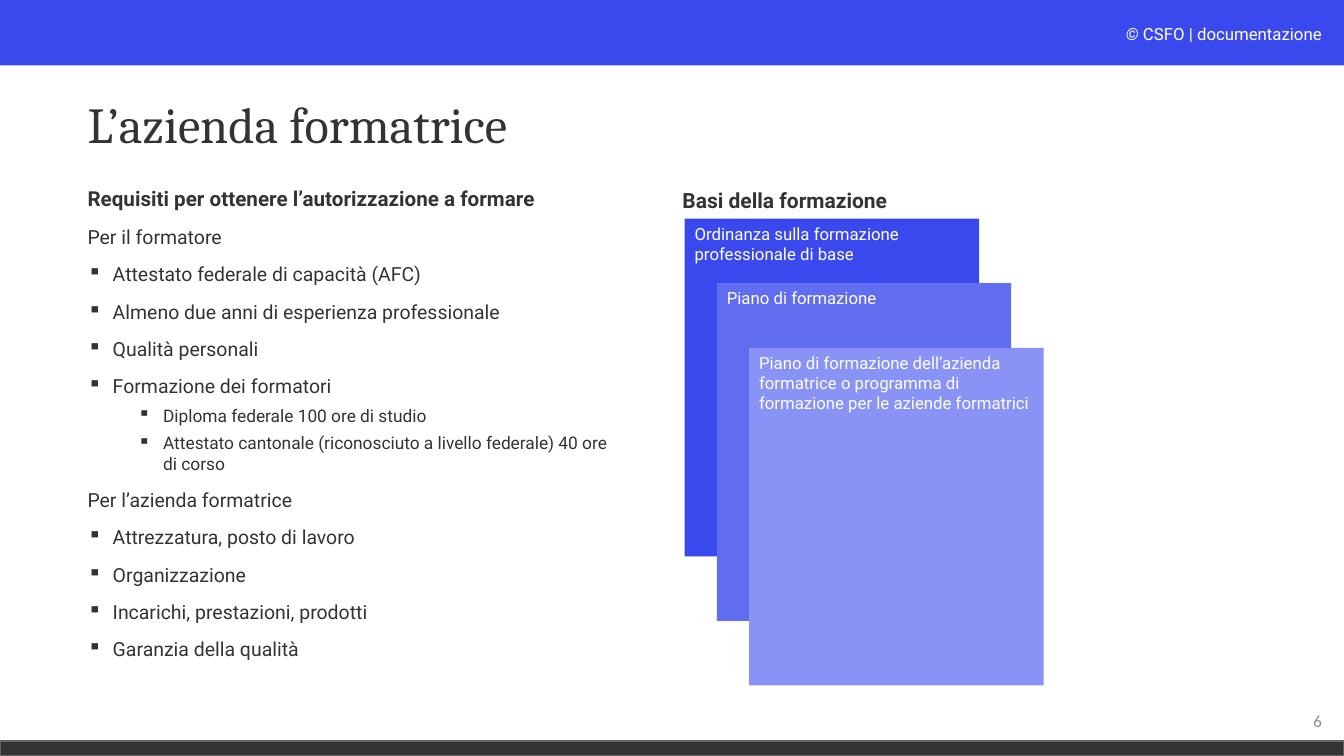
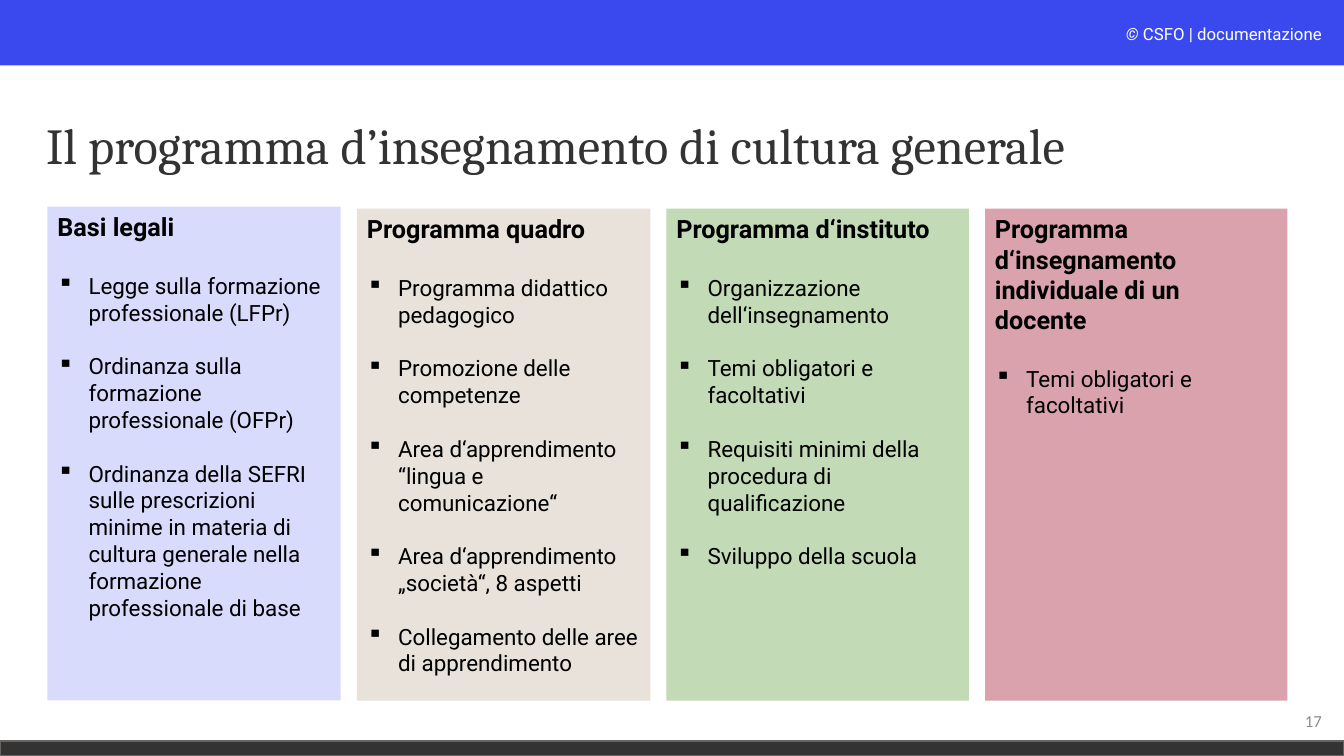
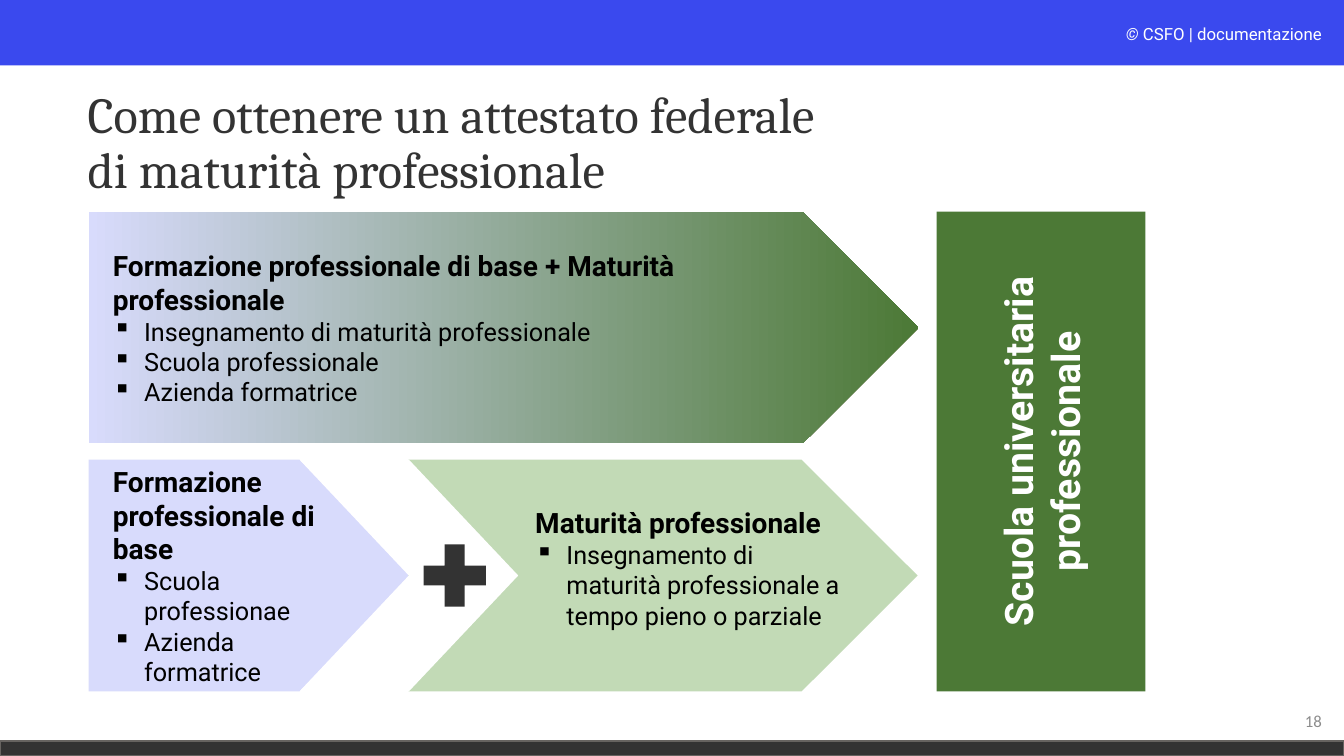
from dataclasses import dataclass, field, replace
from typing import Optional, Sequence

from lxml.etree import SubElement
from pptx import Presentation
from pptx.dml.color import RGBColor
from pptx.enum.shapes import MSO_SHAPE
from pptx.enum.text import MSO_ANCHOR, PP_ALIGN
from pptx.oxml.ns import qn
from pptx.shapes.autoshape import Shape
from pptx.slide import Slide
from pptx.util import Inches, Pt


@dataclass(frozen=True)
class Theme:
    blue: str = "3A49EE"
    mid_blue: str = "616DF1"
    light_blue: str = "8992F5"
    lilac: str = "D8DBFC"
    sand: str = "E8E2DB"
    sage: str = "C2DAB6"
    rose: str = "DAA2AD"
    green: str = "4C7936"
    dark: str = "333333"
    rule: str = "666360"
    grey: str = "8C8C8C"
    black: str = "000000"
    white: str = "FFFFFF"
    off_white: str = "FCFDFE"
    heading_font: str = "Cambria"
    body_font: str = "Roboto"
    number_font: str = "Calibri"
    title: float = 36
    school: float = 28
    path_heading: float = 20
    card_heading: float = 18
    card_text: float = 16
    basis_heading: float = 15
    list_heading: float = 14.7
    list_text: float = 13.9
    list_detail: float = 12.4
    small: float = 12


THEME = Theme()
LINE_FACTOR = 1.196


@dataclass(frozen=True)
class Box:
    left: float
    top: float
    width: float
    height: float


@dataclass(frozen=True)
class Run:
    text: str
    size: float
    color: str = THEME.dark
    bold: bool = False
    italic: bool = False
    font: str = THEME.body_font


@dataclass(frozen=True)
class Para:
    runs: Sequence[Run]
    indent: float = 0
    hanging: float = 0
    before: float = 0
    align: PP_ALIGN = PP_ALIGN.LEFT
    spacing: Optional[float] = None


@dataclass(frozen=True)
class Card:
    width: float
    top: float
    fill: str
    heading: str
    points: Sequence[str] = field(default_factory=tuple)


def write(shape: Shape, paras: Sequence[Para], anchor: MSO_ANCHOR = MSO_ANCHOR.TOP,
          left_inset: float = 0.1) -> None:
    frame = shape.text_frame
    frame.word_wrap = True
    frame.vertical_anchor = anchor
    frame.margin_left = Inches(left_inset)
    for index, para in enumerate(paras):
        paragraph = frame.add_paragraph() if index else frame.paragraphs[0]
        paragraph.alignment = para.align
        if para.spacing:
            paragraph.line_spacing = para.spacing
        if index and para.before:
            paragraph.space_before = Pt(para.before)
        if para.hanging:
            properties = paragraph._p.get_or_add_pPr()
            properties.set("marL", str(Inches(para.indent)))
            properties.set("indent", str(-Inches(para.hanging)))
            SubElement(properties, qn("a:buChar")).set("char", "▪")
        for part in para.runs:
            for line_index, line in enumerate(part.text.split("\n")):
                if line_index:
                    paragraph.add_line_break()
                run = paragraph.add_run()
                run.text = line
                run.font.name = part.font
                run.font.size = Pt(part.size)
                run.font.bold = part.bold
                run.font.italic = part.italic
                run.font.color.rgb = RGBColor.from_string(part.color)


def add_text(slide: Slide, box: Box, paras: Sequence[Para],
             anchor: MSO_ANCHOR = MSO_ANCHOR.TOP) -> None:
    write(slide.shapes.add_textbox(Inches(box.left), Inches(box.top),
                                   Inches(box.width), Inches(box.height)), paras, anchor)


def add_block(slide: Slide, box: Box, fill: str,
              kind: MSO_SHAPE = MSO_SHAPE.RECTANGLE) -> Shape:
    shape = slide.shapes.add_shape(kind, Inches(box.left), Inches(box.top),
                                   Inches(box.width), Inches(box.height))
    shape.shadow.inherit = False
    shape.fill.solid()
    shape.fill.fore_color.rgb = RGBColor.from_string(fill)
    shape.line.fill.background()
    return shape


def shade(shape: Shape, colors: Sequence[str]) -> None:
    shape.fill.gradient()
    shape.fill.gradient_angle = 0
    for position, (stop, color) in enumerate(zip(shape.fill.gradient_stops, colors)):
        stop.position = position
        stop.color.rgb = RGBColor.from_string(color)


def start_slide(deck: Presentation, number: int, title: str, title_box: Box) -> Slide:
    slide = deck.slides.add_slide(deck.slide_layouts[6])
    add_block(slide, Box(0, 0, 13.33, 0.65), THEME.blue)
    footer = add_block(slide, Box(0, 7.35, 13.33, 0.15), THEME.dark)
    footer.line.color.rgb = RGBColor.from_string(THEME.rule)
    footer.line.width = Pt(1)
    add_text(slide, Box(8.62, 0.19, 4.59, 0.3), [Para([
        Run("© ", THEME.small, THEME.off_white, italic=True),
        Run("CSFO | documentazione", THEME.small, THEME.white)], align=PP_ALIGN.RIGHT)])
    add_text(slide, Box(10.21, 6.95, 3, 0.4), [Para([
        Run(str(number), THEME.small, THEME.grey, font=THEME.number_font)],
        align=PP_ALIGN.RIGHT)], MSO_ANCHOR.MIDDLE)
    add_text(slide, title_box, [Para([
        Run(title, THEME.title, font=THEME.heading_font)], spacing=0.9)], MSO_ANCHOR.MIDDLE)
    return slide


def build_company(deck: Presentation) -> None:
    slide = start_slide(deck, 6, "L’azienda formatrice", Box(0.77, 0.82, 8.82, 0.89))

    def plain(text: str) -> Para:
        return Para([Run(text, THEME.list_text)], before=10)

    def point(text: str) -> Para:
        return replace(plain(text), indent=0.25, hanging=0.25)

    def detail(text: str) -> Para:
        return Para([Run(text, THEME.list_detail)], indent=0.75, hanging=0.25, before=5)

    add_text(slide, Box(0.77, 1.8, 5.43, 5), [
        Para([Run("Requisiti per ottenere l’autorizzazione a formare",
                  THEME.list_heading, bold=True)]),
        plain("Per il formatore"),
        point("Attestato federale di capacità (AFC)"),
        point("Almeno due anni di esperienza professionale"),
        point("Qualità personali"),
        point("Formazione dei formatori"),
        detail("Diploma federale 100 ore di studio"),
        detail("Attestato cantonale (riconosciuto a livello federale) 40 ore di corso"),
        plain("Per l’azienda formatrice"),
        point("Attrezzatura, posto di lavoro"),
        point("Organizzazione"),
        point("Incarichi, prestazioni, prodotti"),
        point("Garanzia della qualità"),
    ])
    add_text(slide, Box(6.67, 1.84, 4.9, 0.54), [
        Para([Run("Basi della formazione", THEME.basis_heading, bold=True)], spacing=0.9)])

    bases = [
        (THEME.blue, ["Ordinanza sulla formazione", "professionale di base"]),
        (THEME.mid_blue, ["Piano di formazione"]),
        (THEME.light_blue, ["Piano di formazione dell’azienda formatrice o programma di "
                            "formazione per le aziende formatrici"]),
    ]
    for level, (fill, lines) in enumerate(bases):
        sheet = add_block(slide, Box(6.79 + 0.32 * level, 2.17 + 0.64 * level, 2.92, 3.35), fill)
        write(sheet, [Para([Run(line, THEME.small, THEME.white)]) for line in lines])


def build_programme(deck: Presentation) -> None:
    slide = start_slide(deck, 17, "Il programma d’insegnamento di cultura generale",
                        Box(0.36, 0.74, 11.5, 1.45))
    cards = [
        Card(2.91, 2.05, THEME.lilac, "Basi legali", [
            "Legge sulla formazione professionale (LFPr)",
            "Ordinanza sulla formazione professionale (OFPr)",
            "Ordinanza della SEFRI sulle prescrizioni minime in materia di cultura "
            "generale nella formazione professionale di base"]),
        Card(2.91, 2.07, THEME.sand, "Programma quadro", [
            "Programma didattico pedagogico",
            "Promozione delle competenze",
            "Area d‘apprendimento “lingua e comunicazione“",
            "Area d‘apprendimento „società“, 8 aspetti",
            "Collegamento delle aree di apprendimento"]),
        Card(3, 2.07, THEME.sage, "Programma d‘instituto", [
            "Organizzazione dell‘insegnamento",
            "Temi obligatori e facoltativi",
            "Requisiti minimi della procedura di qualificazione",
            "Sviluppo della scuola"]),
        Card(3, 2.07, THEME.rose, "Programma d‘insegnamento individuale di un docente", [
            "Temi obligatori e facoltativi"]),
    ]
    left, gap, bottom = 0.47, 0.16, 6.95
    for card in cards:
        paras = [Para([Run(card.heading, THEME.card_heading, THEME.black, bold=True)])]
        for index, text in enumerate(card.points):
            blank_line = THEME.card_text if index else THEME.card_heading
            paras.append(Para([Run(text, THEME.card_text, THEME.black)], 0.31, 0.31,
                              before=round(blank_line * LINE_FACTOR, 1)))
        write(add_block(slide, Box(left, card.top, card.width, bottom - card.top), card.fill),
              paras)
        left += card.width + gap


def route_text(heading: str, points: Sequence[str]) -> list[Para]:
    return [Para([Run(heading, THEME.path_heading, THEME.black, bold=True)])] + [
        Para([Run(text, THEME.card_heading, THEME.black)], 0.31, 0.31) for text in points]


def build_baccalaureate(deck: Presentation) -> None:
    slide = start_slide(deck, 18,
                        "Come ottenere un attestato federale\ndi maturità professionale",
                        Box(0.77, 0.71, 8.82, 1.45))
    left, top, lower_top, height = 0.88, 2.1, 4.56, 2.3

    combined = add_block(slide, Box(left, top, 8.23, height), THEME.lilac, MSO_SHAPE.PENTAGON)
    shade(combined, [THEME.lilac, THEME.green])
    write(combined, route_text("Formazione professionale di base + Maturità professionale", [
        "Insegnamento di maturità professionale", "Scuola professionale",
        "Azienda formatrice"]), MSO_ANCHOR.MIDDLE, 0.24)

    basic = add_block(slide, Box(left, lower_top, 3.24, height), THEME.lilac, MSO_SHAPE.PENTAGON)
    write(basic, route_text("Formazione professionale di base", [
        "Scuola professionae", "Azienda formatrice"]), MSO_ANCHOR.MIDDLE, 0.24)

    add_block(slide, Box(4.05, lower_top, 5.05, height), THEME.sage, MSO_SHAPE.PENTAGON)
    add_block(slide, Box(2.97, lower_top, 2.17, height), THEME.white, MSO_SHAPE.CHEVRON)
    add_text(slide, Box(5.21, 4.97, 3.29, 1.65), route_text("Maturità professionale", [
        "Insegnamento di maturità professionale a tempo pieno o parziale"]))

    school = add_block(slide, Box(9.29, top, 2.07, lower_top + height - top), THEME.green)
    write(school, [Para([Run("Scuola universitaria professionale", THEME.school, THEME.white,
                             bold=True)], align=PP_ALIGN.CENTER)], MSO_ANCHOR.MIDDLE)
    school.text_frame._txBody.bodyPr.set("vert", "vert270")
    add_block(slide, Box(4.09, 5.29, 0.84, 0.84), THEME.dark, MSO_SHAPE.MATH_PLUS)


def main() -> None:
    deck = Presentation()
    deck.slide_width = Inches(13.33)
    deck.slide_height = Inches(7.5)
    build_company(deck)
    build_programme(deck)
    build_baccalaureate(deck)
    deck.save("out.pptx")


if __name__ == "__main__":
    main()
